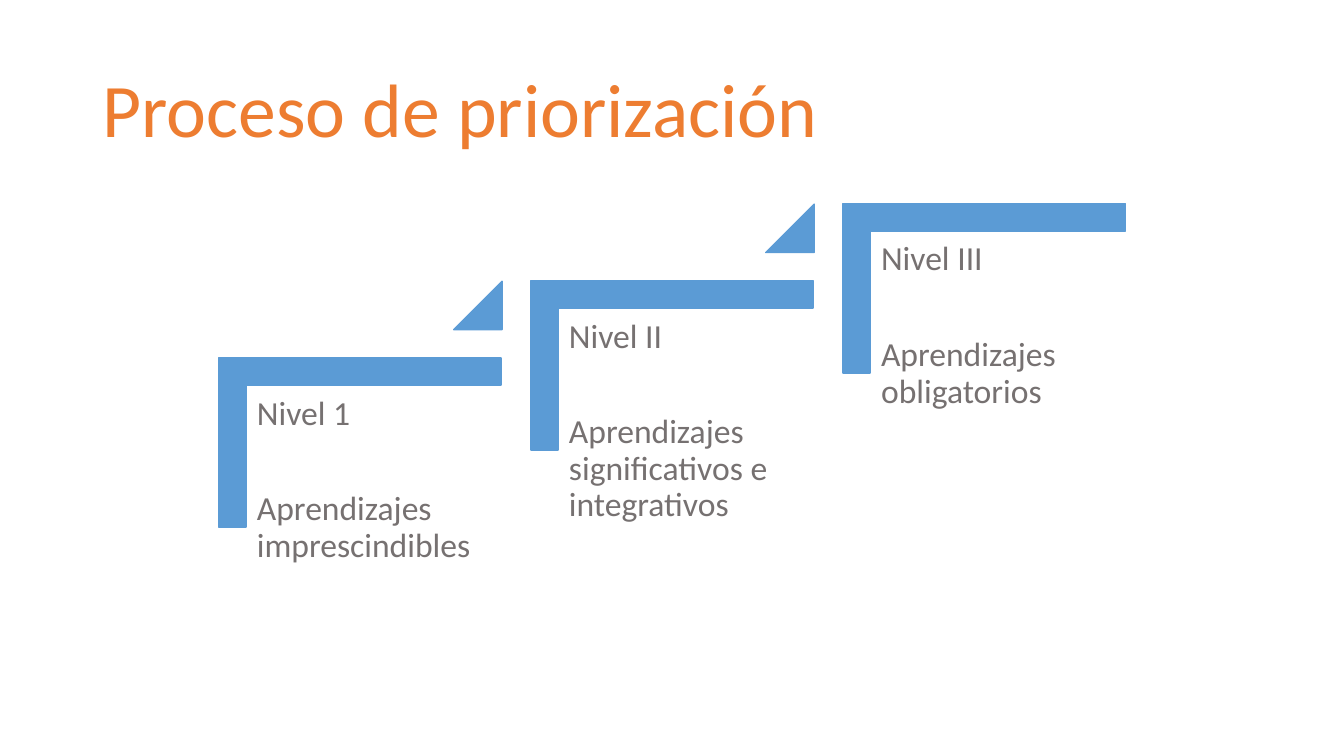
from pptx import Presentation
from pptx.dml.color import RGBColor
from pptx.enum.shapes import MSO_SHAPE
from pptx.enum.text import MSO_ANCHOR
from pptx.util import Inches, Pt

TITLE = "Proceso de priorización"
LEVELS = [
    ("Nivel 1", "Aprendizajes imprescindibles"),
    ("Nivel II", "Aprendizajes significativos e integrativos"),
    ("Nivel III", "Aprendizajes obligatorios"),
]
ORANGE, BLUE, GRAY = "ED7D31", "5B9BD5", "767171"
STEP_X, STEP_Y = 3.095, -0.765


def color(value):
    return RGBColor.from_string(value)


def add_text(page, place, lines, size, ink, inset, anchor, gap=0):
    box = page.shapes.add_textbox(*map(Inches, place))
    frame = box.text_frame
    frame.word_wrap = True
    frame.vertical_anchor = anchor
    frame.margin_left = frame.margin_right = Inches(inset[0])
    frame.margin_top = frame.margin_bottom = Inches(inset[1])
    for index, line in enumerate(lines):
        para = frame.add_paragraph() if index else frame.paragraphs[0]
        para.line_spacing = 0.9
        para.space_before = Pt(gap if index else 0)
        span = para.add_run()
        span.text = line
        span.font.name = "Calibri"
        span.font.size = Pt(size)
        span.font.color.rgb = color(ink)


def add_blue(page, kind, place, adjustments, rotation=0):
    shape = page.shapes.add_shape(kind, *map(Inches, place))
    shape.rotation = rotation
    shape.shadow.inherit = False
    shape.fill.solid()
    shape.fill.fore_color.rgb = color(BLUE)
    shape.line.color.rgb = color(BLUE)
    shape.line.width = Pt(1)
    for index, value in enumerate(adjustments):
        shape.adjustments[index] = value


def main():
    deck = Presentation()
    deck.slide_width, deck.slide_height = Inches(13.33), Inches(7.5)
    page = deck.slides.add_slide(deck.slide_layouts[6])
    add_text(page, (0.92, 0.4, 11.5, 1.45), [TITLE], 54, ORANGE,
             (0.1, 0.05), MSO_ANCHOR.MIDDLE)
    for number, lines in enumerate(LEVELS):
        across, up = number * STEP_X, number * STEP_Y
        add_blue(page, MSO_SHAPE.CORNER, (2.73 + across, 2.99 + up, 1.68, 2.8),
                 (0.161, 0.161), 90)
        add_text(page, (2.45 + across, 3.83 + up, 2.53, 2.22), lines, 24, GRAY,
                 (0.1, 0.1), MSO_ANCHOR.TOP, 42.5)
        if number < len(LEVELS) - 1:
            add_blue(page, MSO_SHAPE.ISOSCELES_TRIANGLE,
                     (4.5 + across, 2.79 + up, 0.48, 0.48), (1,))
    deck.save("out.pptx")


if __name__ == "__main__":
    main()
